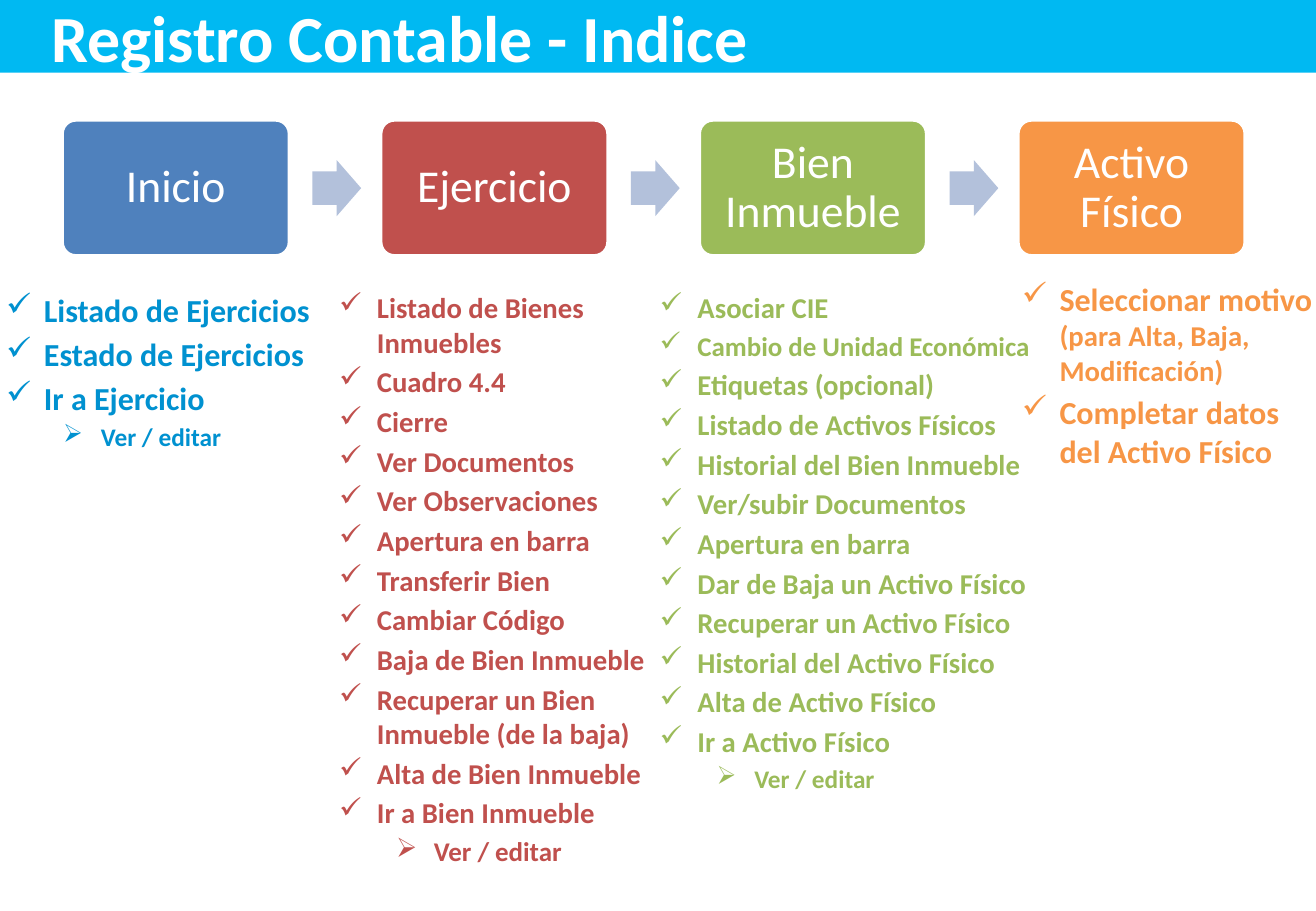
from lxml.etree import SubElement
from pptx import Presentation
from pptx.dml.color import RGBColor
from pptx.enum.shapes import MSO_SHAPE as SHAPE
from pptx.enum.text import MSO_ANCHOR as ANCHOR, PP_ALIGN as ALIGN
from pptx.oxml.ns import qn
from pptx.util import Cm, Pt

WHITE = RGBColor(0xFF, 0xFF, 0xFF)
CYAN = RGBColor(0x00, 0xB9, 0xF2)
SKY = RGBColor(0x00, 0x91, 0xD0)
BLUE = RGBColor(0x4F, 0x81, 0xBD)
RED = RGBColor(0xC0, 0x50, 0x4D)
GREEN = RGBColor(0x9B, 0xBB, 0x59)
ORANGE = RGBColor(0xF7, 0x96, 0x46)
ARROW = RGBColor(0xB3, 0xC1, 0xDB)

SLIDE_W, SLIDE_H = 27.51, 19.05
STEP_LEFT, STEP_PITCH = 1.3, 6.66

STEPS = [("Inicio", BLUE), ("Ejercicio", RED), ("Bien Inmueble", GREEN), ("Activo Físico", ORANGE)]

INICIO = [(0, [(t, 19)]) for t in ("Listado de Ejercicios", "Estado de Ejercicios", "Ir a Ejercicio")]
INICIO += [(1, [("Ver / editar", 15)])]

EJERCICIO = [(0, [(t, 17)]) for t in (
    "Listado de Bienes Inmuebles", "Cuadro 4.4", "Cierre", "Ver Documentos",
    "Ver Observaciones", "Apertura en barra", "Transferir Bien", "Cambiar Código",
    "Baja de Bien Inmueble", "Recuperar un Bien Inmueble (de la baja)",
    "Alta de Bien Inmueble", "Ir a Bien Inmueble")]
EJERCICIO += [(1, [("Ver / editar", 16)])]

BIEN = [(0, [("Asociar CIE", 17)]), (0, [("Cambio de Unidad Económica", 16)])]
BIEN += [(0, [(t, 17)]) for t in (
    "Etiquetas (opcional)", "Listado de Activos Físicos", "Historial del Bien Inmueble",
    "Ver/subir Documentos", "Apertura en barra", "Dar de Baja un Activo Físico",
    "Recuperar un Activo Físico", "Historial del Activo Físico",
    "Alta de Activo Físico", "Ir a Activo Físico")]
BIEN += [(1, [("Ver / editar", 15)])]

ACTIVO = [
    (0, [("Seleccionar motivo ", 19), ("(para Alta, Baja, Modificación)", 17)]),
    (0, [("Completar datos del Activo Físico", 19)]),
]

LISTS = [
    ((-0.15, 5.94, 8.36, 9.83), SKY, INICIO),
    ((6.81, 5.94, 8.31, 13.39), RED, EJERCICIO),
    ((13.51, 5.94, 8.48, 12.57), GREEN, BIEN),
    ((21.08, 5.72, 6.71, 12.57), ORANGE, ACTIVO),
]


class Deck:
    """Draws each kind of element on the slide in one style."""

    font = "Calibri"
    bullets = ("✓", "➢")
    indents = (0.79, 1.98)
    hang = 0.79

    def __init__(self, s):
        self.s = s

    def shape(self, kind, box, fill, adj=()):
        sp = self.s.shapes.add_shape(kind, *map(Cm, box))
        sp.shadow.inherit = False
        sp.fill.solid()
        sp.fill.fore_color.rgb = fill
        sp.line.fill.background()
        for i, value in enumerate(adj):
            sp.adjustments[i] = value
        return sp

    def frame(self, sp, anchor, side, edge):
        tf = sp.text_frame
        tf.word_wrap = True
        tf.vertical_anchor = anchor
        tf.margin_left = tf.margin_right = Cm(side)
        tf.margin_top = tf.margin_bottom = Cm(edge)
        return tf

    def run(self, p, text, size, color, bold=False):
        r = p.add_run()
        r.text = text
        r.font.name = self.font
        r.font.size = Pt(size)
        r.font.bold = bold
        r.font.color.rgb = color

    def title(self, text):
        sp = self.shape(SHAPE.RECTANGLE, (0, 0, SLIDE_W, 1.52), CYAN)
        p = self.frame(sp, ANCHOR.MIDDLE, 1.07, 0.13).paragraphs[0]
        p.alignment = ALIGN.LEFT
        self.run(p, text, 39, WHITE, True)

    def step(self, left, text, color):
        sp = self.shape(SHAPE.ROUNDED_RECTANGLE, (left, 2.51, 4.75, 2.84), color, (0.1,))
        sp.line.color.rgb = WHITE
        sp.line.width = Pt(2)
        p = self.frame(sp, ANCHOR.MIDDLE, 0.37, 0.37).paragraphs[0]
        p.alignment = ALIGN.CENTER
        p.line_spacing = 0.9
        self.run(p, text, 27, WHITE)

    def arrow(self, left):
        self.shape(SHAPE.RIGHT_ARROW, (left, 3.35, 1.02, 1.17), ARROW, (0.6, 0.5))

    def bullet_list(self, box, color, items):
        sp = self.s.shapes.add_textbox(*map(Cm, box))
        tf = self.frame(sp, ANCHOR.TOP, 0.28, 0.13)
        for i, (level, runs) in enumerate(items):
            p = tf.add_paragraph() if i else tf.paragraphs[0]
            p.level = level
            p.space_before = Pt(round(0.18 * runs[0][1], 1))
            pPr = p._p.get_or_add_pPr()
            pPr.set("marL", str(Cm(self.indents[level])))
            pPr.set("indent", str(Cm(-self.hang)))
            SubElement(pPr, qn("a:buChar")).set("char", self.bullets[level])
            for text, size in runs:
                self.run(p, text, size, color, True)


def main():
    prs = Presentation()
    prs.slide_width, prs.slide_height = Cm(SLIDE_W), Cm(SLIDE_H)
    deck = Deck(prs.slides.add_slide(prs.slide_layouts[6]))
    deck.title("Registro Contable - Indice")
    for i, (text, color) in enumerate(STEPS):
        left = STEP_LEFT + i * STEP_PITCH
        if i:
            deck.arrow(left - 1.43)
        deck.step(left, text, color)
    for box, color, items in LISTS:
        deck.bullet_list(box, color, items)
    prs.save("out.pptx")


if __name__ == "__main__":
    main()
